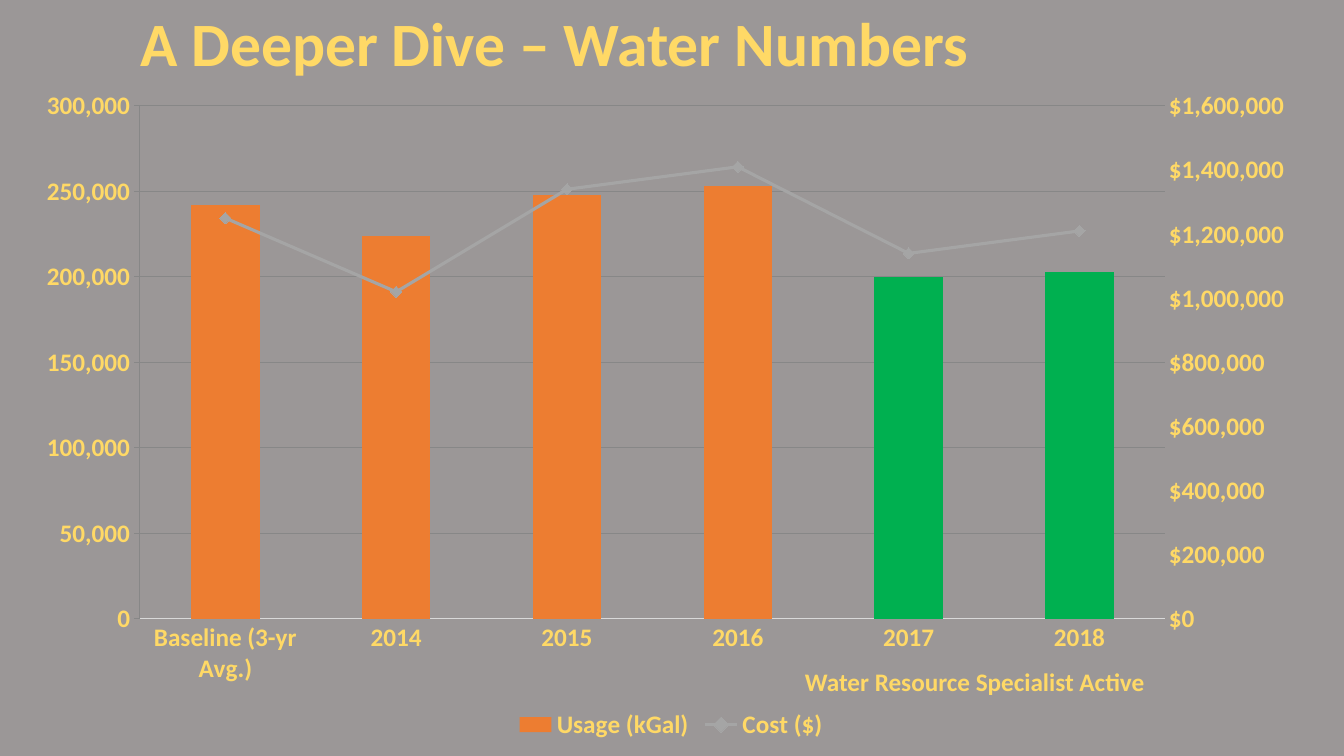
from copy import deepcopy
from dataclasses import dataclass

from lxml import etree
from pptx import Presentation
from pptx.chart.axis import ValueAxis
from pptx.chart.data import CategoryChartData
from pptx.dml.color import RGBColor
from pptx.enum.chart import XL_CHART_TYPE as CT, XL_LEGEND_POSITION as LEGEND
from pptx.enum.chart import XL_MARKER_STYLE as MARKER, XL_TICK_MARK as TICK
from pptx.enum.text import MSO_ANCHOR, MSO_AUTO_SIZE, PP_ALIGN
from pptx.oxml.ns import qn
from pptx.util import Pt

PX = 12192000 / 1344  # EMU in one px


@dataclass(frozen=True)
class Theme:
    font: str = "Calibri"
    title_size: int = 44
    text_size: int = 18
    back: str = "9B9797"
    text: str = "FFD966"
    usage: str = "ED7D31"
    active: str = "00B050"
    cost: str = "A5A5A5"
    grid: str = "D9D9D9"


T = Theme()
CHART_BOX = (27, 78, 1288, 667)
PLOT_BOX = (140, 106, 1025, 513)
YEARS = ["Baseline (3-yr Avg.)", "2014", "2015", "2016", "2017", "2018"]
USAGE = [242000, 224000, 248000, 253000, 200000, 203000]
COST = [1250000, 1020000, 1340000, 1410000, 1140000, 1210000]
ACTIVE_YEARS = (4, 5)


def px(*lengths):
    return [round(n * PX) for n in lengths]


def paint(fill, color):
    fill.solid()
    fill.fore_color.rgb = RGBColor.from_string(color)


def draw_line(line, color, width):
    paint(line.fill, color)
    line.width = Pt(width)


def set_font(font, size):
    font.name, font.size, font.bold = T.font, Pt(size), True
    font.color.rgb = RGBColor.from_string(T.text)


def add_run(tf, text, size):
    p = tf.paragraphs[0]
    p.alignment = PP_ALIGN.LEFT
    r = p.add_run()
    r.text = text
    set_font(r.font, size)
    return p


def set_title(s, text, box):
    sp = s.shapes.title
    sp.left, sp.top, sp.width, sp.height = px(*box)
    tf = sp.text_frame
    tf.word_wrap = True
    tf.vertical_anchor = MSO_ANCHOR.MIDDLE
    add_run(tf, text, T.title_size).line_spacing = 0.9


def add_label(s, text, box):
    tf = s.shapes.add_textbox(*px(*box)).text_frame
    tf.word_wrap = True
    tf.auto_size = MSO_AUTO_SIZE.SHAPE_TO_FIT_TEXT
    add_run(tf, text, T.text_size)


def style_axis(axis):
    axis.major_tick_mark = axis.minor_tick_mark = TICK.NONE
    set_font(axis.tick_labels.font, T.text_size)


def style_value_axis(axis, top, step, number_format):
    style_axis(axis)
    axis.minimum_scale, axis.maximum_scale, axis.major_unit = 0, top, step
    axis.tick_labels.number_format = number_format
    axis.tick_labels.number_format_is_linked = False
    axis.format.line.fill.background()


def add_right_axis(chart):
    """Move the last series to a line plot with its own axes; return its value axis."""
    plot_area = chart.plots[0]._element.getparent()
    bar = plot_area.find(qn("c:barChart"))
    ser = bar.findall(qn("c:ser"))[-1]
    for bar_only in ser.findall(qn("c:invertIfNegative")):
        ser.remove(bar_only)

    line = etree.SubElement(plot_area, qn("c:lineChart"))
    bar.addnext(line)
    etree.SubElement(line, qn("c:grouping")).set("val", "standard")
    etree.SubElement(line, qn("c:varyColors")).set("val", "0")
    line.append(ser)
    etree.SubElement(line, qn("c:marker")).set("val", "1")

    cat = deepcopy(plot_area.find(qn("c:catAx")))
    val = deepcopy(plot_area.find(qn("c:valAx")))
    for axis, own, other in ((cat, "5001", "5002"), (val, "5002", "5001")):
        etree.SubElement(line, qn("c:axId")).set("val", own)
        axis.find(qn("c:axId")).set("val", own)
        axis.find(qn("c:crossAx")).set("val", other)
    cat.find(qn("c:delete")).set("val", "1")
    val.find(qn("c:axPos")).set("val", "r")
    val.find(qn("c:crosses")).set("val", "max")
    plot_area.find(qn("c:valAx")).addnext(val)
    val.addnext(cat)

    right = ValueAxis(val)
    right.has_major_gridlines = False
    return right


def place_plot(chart):
    plot_area = chart.plots[0]._element.getparent()
    for old in plot_area.findall(qn("c:layout")):
        plot_area.remove(old)
    layout = etree.Element(qn("c:layout"))
    plot_area.insert(0, layout)
    manual = etree.SubElement(layout, qn("c:manualLayout"))
    left, top, width, height = CHART_BOX
    x, y, w, h = PLOT_BOX
    settings = {"layoutTarget": "inner", "xMode": "edge", "yMode": "edge",
                "x": (x - left) / width, "y": (y - top) / height,
                "w": w / width, "h": h / height}
    for name, value in settings.items():
        etree.SubElement(manual, qn("c:" + name)).set("val", str(value))


def style_marker(marker, color):
    marker.style, marker.size = MARKER.DIAMOND, 8
    paint(marker.format.fill, color)
    draw_line(marker.format.line, color, 0.75)


def add_water_chart(s):
    data = CategoryChartData(number_format="#,##0")
    data.categories = YEARS
    data.add_series("Usage (kGal)", USAGE)
    data.add_series("Cost ($)", COST, number_format='"$"#,##0')
    chart = s.shapes.add_chart(CT.COLUMN_CLUSTERED, *px(*CHART_BOX), data).chart
    chart.has_title = False
    set_font(chart.font, T.text_size)
    right = add_right_axis(chart)
    place_plot(chart)

    # Axes
    style_axis(chart.category_axis)
    draw_line(chart.category_axis.format.line, T.grid, 0.75)
    left = chart.value_axis
    style_value_axis(left, 300000, 50000, "#,##0")
    draw_line(left.major_gridlines.format.line, T.grid, 0.75)
    style_value_axis(right, 1600000, 200000, '"$"#,##0')

    # Series
    columns, line = chart.plots
    columns.gap_width = 150
    columns.vary_by_categories = False
    usage, cost = columns.series[0], line.series[0]
    paint(usage.format.fill, T.usage)
    cost.smooth = False
    draw_line(cost.format.line, T.cost, 2.25)
    style_marker(cost.marker, T.cost)
    for i in ACTIVE_YEARS:
        paint(usage.points[i].format.fill, T.active)
        style_marker(cost.points[i].marker, T.active)
        draw_line(cost.points[i].format.line, T.cost, 2.25)

    # Legend
    chart.has_legend = True
    chart.legend.position = LEGEND.BOTTOM
    chart.legend.include_in_layout = False
    set_font(chart.legend.font, T.text_size)


def main():
    prs = Presentation()
    prs.slide_width, prs.slide_height = px(1344, 756)
    s = prs.slides.add_slide(prs.slide_layouts[5])
    paint(s.background.fill, T.back)
    add_water_chart(s)
    add_label(s, "Water Resource Specialist Active", (795, 661, 368, 40))
    set_title(s, "A Deeper Dive – Water Numbers", (130, 0, 1159, 94))
    prs.save("out.pptx")


if __name__ == "__main__":
    main()
